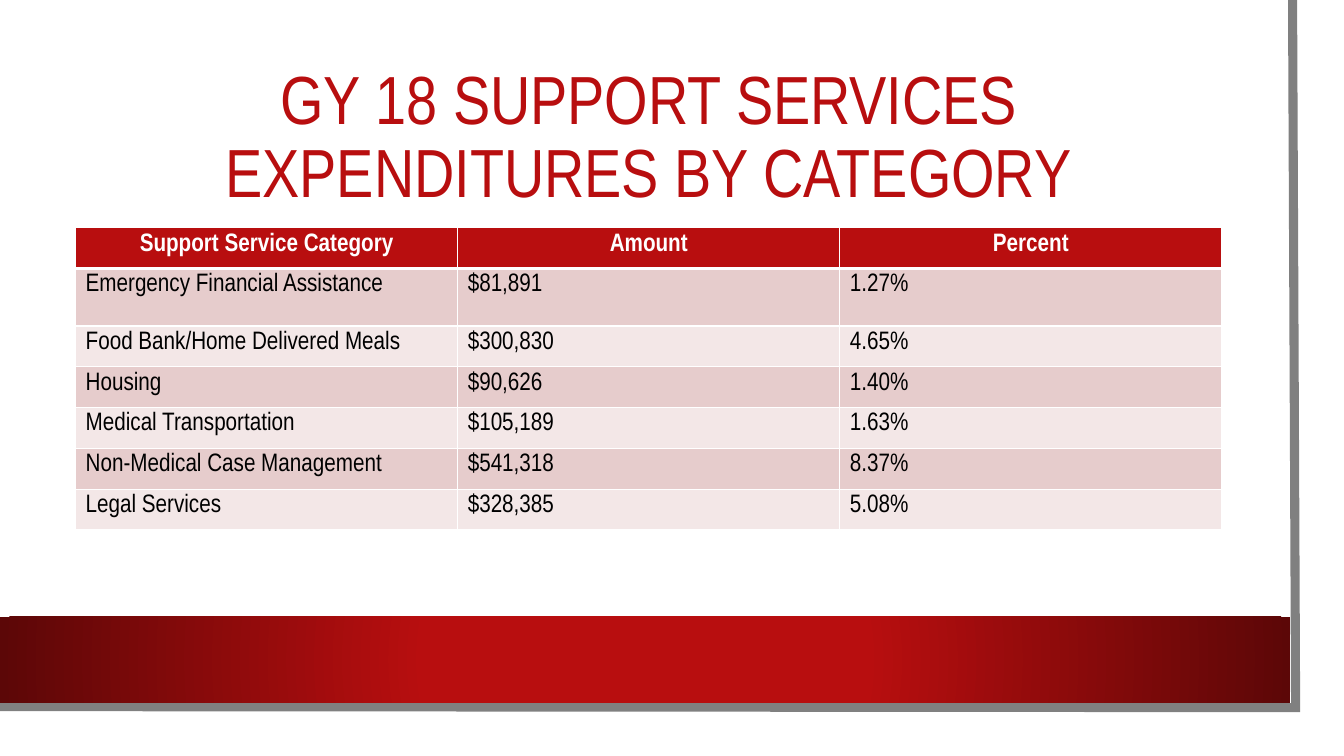
from dataclasses import dataclass

from lxml.etree import SubElement
from pptx import Presentation
from pptx.dml.color import RGBColor
from pptx.enum.shapes import MSO_SHAPE
from pptx.enum.text import MSO_ANCHOR, MSO_AUTO_SIZE, PP_ALIGN
from pptx.oxml.ns import qn
from pptx.util import Inches, Pt


@dataclass(frozen=True)
class Theme:
    font: str = "Arial Narrow"
    accent: str = "B80E0F"
    accent_dark: str = "5C0707"
    frame: str = "808080"
    paper: str = "FFFFFF"
    ink: str = "000000"
    bands: tuple = ("E6CCCC", "F3E7E7")
    title_size: float = 48.6
    table_size: float = 18
    frame_width: float = 6.5
    rule_width: float = 1
    header_rule_width: float = 3


THEME = Theme()
SLIDE_WIDTH, SLIDE_HEIGHT = 13.33, 7.5
MARGIN, CONTENT_WIDTH = 0.75, 11.37
TABLE_TOP, TABLE_HEIGHT, TALL_ROW_HEIGHT = 2.26, 3, 0.57
HEADINGS = ("Support Service Category", "Amount", "Percent")
EXPENDITURES = (
    ("Emergency Financial Assistance", "$81,891", "1.27%"),
    ("Food Bank/Home Delivered Meals", "$300,830", "4.65%"),
    ("Housing", "$90,626", "1.40%"),
    ("Medical Transportation", "$105,189", "1.63%"),
    ("Non-Medical Case Management", "$541,318", "8.37%"),
    ("Legal Services", "$328,385", "5.08%"),
)


def apply_format(target, values):
    for name, value in values.items():
        setattr(target, name, value)


def format_text(paragraph, size, color, bold=False, alignment=PP_ALIGN.LEFT):
    paragraph.alignment = alignment
    apply_format(paragraph.font, {"name": THEME.font, "size": Pt(size), "bold": bold})
    paragraph.font.color.rgb = RGBColor.from_string(color)


def fill_solid(target, color):
    target.fill.solid()
    target.fill.fore_color.rgb = RGBColor.from_string(color)


def add_panel(slide, top, width, height):
    shape = slide.shapes.add_shape(
        MSO_SHAPE.RECTANGLE, 0, Inches(top), Inches(width), Inches(height)
    )
    shape.shadow.inherit = False
    shape.line.fill.background()
    fill_solid(shape, THEME.paper)
    return shape


def fill_radial(shape, stops):
    properties = shape.element.spPr
    solid = properties.find(qn("a:solidFill"))
    gradient = properties.makeelement(qn("a:gradFill"), {"rotWithShape": "1"})
    stop_list = SubElement(gradient, qn("a:gsLst"))
    for percent, color in stops:
        stop = SubElement(stop_list, qn("a:gs"), pos=str(percent * 1000))
        SubElement(stop, qn("a:srgbClr"), val=color)
    circle = SubElement(gradient, qn("a:path"), {"path": "circle"})
    SubElement(circle, qn("a:fillToRect"), dict.fromkeys("ltrb", "50000"))
    properties.replace(solid, gradient)


def add_frame_edge(slide, points):
    corners = [(Inches(x), Inches(y)) for x, y in points]
    builder = slide.shapes.build_freeform(*corners[0])
    builder.add_line_segments(corners[1:], close=False)
    shape = builder.convert_to_shape()
    shape.shadow.inherit = False
    shape.fill.background()
    shape.line.width = Pt(THEME.frame_width)
    shape.line.color.rgb = RGBColor.from_string(THEME.frame)
    SubElement(shape.element.spPr.find(qn("a:ln")), qn("a:miter"), lim="800000")


def set_title(slide, text):
    title = slide.shapes.title
    title.element.getparent().append(title.element)
    apply_format(title, {
        "left": Inches(MARGIN), "top": Inches(0.75),
        "width": Inches(CONTENT_WIDTH), "height": Inches(1.26),
    })
    frame = title.text_frame
    frame.text = text
    apply_format(frame, {
        "word_wrap": True, "auto_size": MSO_AUTO_SIZE.NONE,
        "vertical_anchor": MSO_ANCHOR.MIDDLE,
    })
    paragraph = frame.paragraphs[0]
    format_text(paragraph, THEME.title_size, THEME.accent, alignment=PP_ALIGN.CENTER)
    paragraph.line_spacing = 0.9


def set_borders(cell, widths):
    properties = cell._tc.get_or_add_tcPr()
    for side, width in widths.items():
        line = SubElement(properties, qn(f"a:ln{side}"), w=str(Pt(width)))
        fill = SubElement(line, qn("a:solidFill"))
        SubElement(fill, qn("a:srgbClr"), val=THEME.paper)


def set_cell(cell, text, row):
    header = row == 0
    cell.text = text
    apply_format(cell, {
        "margin_left": Inches(0.1), "margin_right": Inches(0.1),
        "margin_top": Inches(0.05), "margin_bottom": Inches(0.05),
        "vertical_anchor": MSO_ANCHOR.TOP,
    })
    widths = dict.fromkeys("LRTB", THEME.rule_width)
    if row < 2:
        widths["B" if header else "T"] = THEME.header_rule_width
    set_borders(cell, widths)
    fill_solid(cell, THEME.accent if header else THEME.bands[(row - 1) % 2])
    format_text(
        cell.text_frame.paragraphs[0], THEME.table_size,
        THEME.paper if header else THEME.ink, header,
        PP_ALIGN.CENTER if header else PP_ALIGN.LEFT,
    )


def add_expenditure_table(slide):
    records = (HEADINGS, *EXPENDITURES)
    row_height = (TABLE_HEIGHT - TALL_ROW_HEIGHT) / (len(records) - 1)
    heights = [row_height] * len(records)
    heights[1] = TALL_ROW_HEIGHT
    table = slide.shapes.add_table(
        len(records), len(HEADINGS), Inches(MARGIN), Inches(TABLE_TOP),
        Inches(CONTENT_WIDTH), Inches(TABLE_HEIGHT),
    ).table
    for row, (record, height) in enumerate(zip(records, heights)):
        table.rows[row].height = Inches(height)
        for column, text in enumerate(record):
            set_cell(table.cell(row, column), text, row)


def main():
    presentation = Presentation()
    presentation.slide_width = Inches(SLIDE_WIDTH)
    presentation.slide_height = Inches(SLIDE_HEIGHT)
    slide = presentation.slides.add_slide(presentation.slide_layouts[5])
    add_panel(slide, 0, 13.1, 7.27)
    add_frame_edge(slide, ((12.82, 0), (12.85, 7.02), (0, 7.01)))
    band = add_panel(slide, 6.12, 12.8, 0.85)
    fill_radial(band, ((34, THEME.accent), (100, THEME.accent_dark)))
    set_title(slide, "GY 18 SUPPORT SERVICES EXPENDITURES BY CATEGORY")
    add_expenditure_table(slide)
    presentation.save("out.pptx")


if __name__ == "__main__":
    main()
